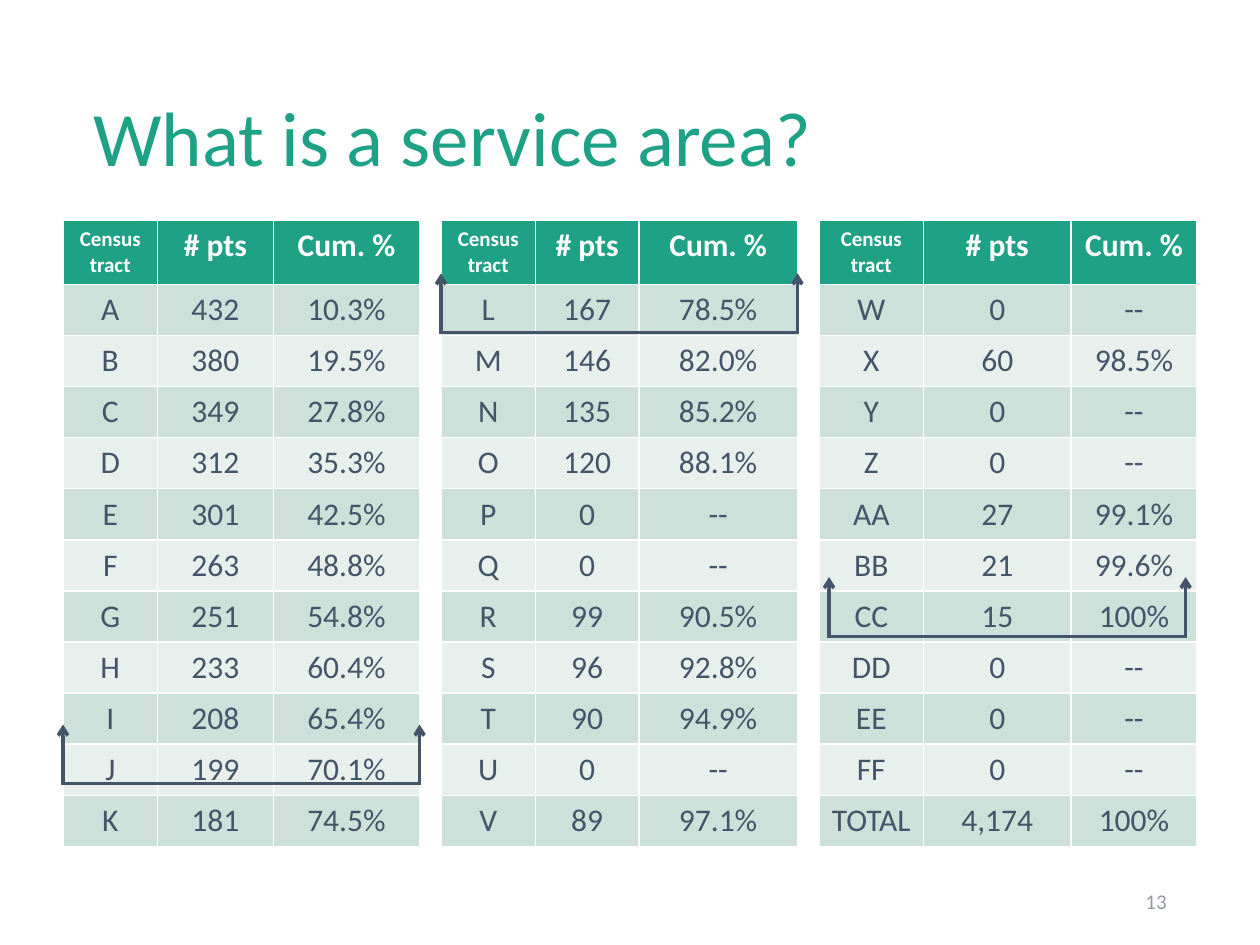
from lxml import etree
from pptx import Presentation
from pptx.dml.color import RGBColor
from pptx.enum.shapes import MSO_CONNECTOR as Connector
from pptx.enum.text import MSO_ANCHOR as Anchor, MSO_AUTO_SIZE as AutoSize, PP_ALIGN as Align
from pptx.oxml.ns import qn
from pptx.util import Inches, Pt

FONT = "Calibri"
COLORS = {"green": "1EA185", "dark": "445469", "white": "FFFFFF",
          "odd": "CDE0D9", "even": "E8F0ED", "grey": "9499A1"}
TITLE = "What is a service area?"
PAGE_NUMBER = "13"
HEADER = ("Census tract", "# pts", "Cum. %")
TABLES = [
    {"left": 0.5, "columns": (0.75, 0.92, 1.16), "rows": [
        ("A", "432", "10.3%"), ("B", "380", "19.5%"), ("C", "349", "27.8%"),
        ("D", "312", "35.3%"), ("E", "301", "42.5%"), ("F", "263", "48.8%"),
        ("G", "251", "54.8%"), ("H", "233", "60.4%"), ("I", "208", "65.4%"),
        ("J", "199", "70.1%"), ("K", "181", "74.5%")]},
    {"left": 3.5, "columns": (0.75, 0.82, 1.26), "rows": [
        ("L", "167", "78.5%"), ("M", "146", "82.0%"), ("N", "135", "85.2%"),
        ("O", "120", "88.1%"), ("P", "0", "--"), ("Q", "0", "--"),
        ("R", "99", "90.5%"), ("S", "96", "92.8%"), ("T", "90", "94.9%"),
        ("U", "0", "--"), ("V", "89", "97.1%")]},
    {"left": 6.5, "columns": (0.83, 1.17, 1), "rows": [
        ("W", "0", "--"), ("X", "60", "98.5%"), ("Y", "0", "--"),
        ("Z", "0", "--"), ("AA", "27", "99.1%"), ("BB", "21", "99.6%"),
        ("CC", "15", "100%"), ("DD", "0", "--"), ("EE", "0", "--"),
        ("FF", "0", "--"), ("TOTAL", "4,174", "100%")]},
]
TABLE_TOP, TABLE_HEIGHT, HEADER_HEIGHT = 1.75, 4.96, 0.5
BRACKETS = [(0.5, 6.22), (3.5, 2.64), (6.58, 5.05)]
BRACKET_WIDTH, BRACKET_HEIGHT, BRACKET_OVERLAP = 2.83, 0.47, 0.01


def color(name):
    return RGBColor.from_string(COLORS[name])


def format_text(frame, size, color_name, align, bold=False):
    for para in frame.paragraphs:
        para.alignment = align
        for span in para.runs:
            span.font.name = FONT
            span.font.size = Pt(size)
            span.font.bold = bold
            span.font.color.rgb = color(color_name)


def set_frame(frame):
    frame.word_wrap = True
    frame.auto_size = AutoSize.NONE
    frame.vertical_anchor = Anchor.MIDDLE
    frame.margin_left = frame.margin_right = Inches(0.05)
    frame.margin_top = frame.margin_bottom = Inches(0.03)


def add_title(page):
    title = page.shapes.title
    title.left, title.top = Inches(0.69), Inches(0.4)
    title.width, title.height = Inches(8.62), Inches(1.45)
    title.text_frame.text = TITLE
    set_frame(title.text_frame)
    title.text_frame.paragraphs[0].line_spacing = 0.9
    format_text(title.text_frame, 44, "green", Align.LEFT)


def add_tract_table(page, left, columns, rows):
    table = page.shapes.add_table(
        len(rows) + 1, len(columns), Inches(left), Inches(TABLE_TOP),
        Inches(sum(columns)), Inches(TABLE_HEIGHT)).table
    for column, width in zip(table.columns, columns):
        column.width = Inches(width)
    row_height = (TABLE_HEIGHT - HEADER_HEIGHT) / len(rows)
    for r, values in enumerate([HEADER, *rows]):
        is_header = r == 0
        table.rows[r].height = Inches(HEADER_HEIGHT if is_header else row_height)
        fill = "green" if is_header else "odd" if r % 2 else "even"
        for c, value in enumerate(values):
            cell = table.cell(r, c)
            cell.text_frame.text = value
            cell.fill.solid()
            cell.fill.fore_color.rgb = color(fill)
            format_text(cell.text_frame, 12 if is_header and c == 0 else 18,
                        "white" if is_header else "dark", Align.CENTER, is_header)


def add_line(group, start, end, arrow=False):
    line = group.shapes.add_connector(
        Connector.STRAIGHT, *(Inches(value) for value in (*start, *end)))
    line.line.color.rgb = color("dark")
    line.line.width = Pt(2)
    properties = line._element.spPr
    if arrow:
        etree.SubElement(properties.find(qn("a:ln")), qn("a:tailEnd"), type="arrow")
    etree.SubElement(properties, qn("a:effectLst"))


def add_bracket(page, left, base):
    group = page.shapes.add_group_shape()
    right = left + BRACKET_WIDTH
    add_line(group, (left, base), (right, base))
    for x in (left, right):
        add_line(group, (x, base + BRACKET_OVERLAP), (x, base - BRACKET_HEIGHT), arrow=True)


def add_page_number(page):
    box = page.shapes.add_textbox(Inches(7.06), Inches(6.95), Inches(2.25), Inches(0.4))
    box.text_frame.text = PAGE_NUMBER
    set_frame(box.text_frame)
    format_text(box.text_frame, 12, "grey", Align.RIGHT)


def main():
    deck = Presentation()
    deck.slide_width, deck.slide_height = Inches(10), Inches(7.5)
    page = deck.slides.add_slide(deck.slide_layouts[5])
    add_title(page)
    for table in TABLES:
        add_tract_table(page, **table)
    for left, base in BRACKETS:
        add_bracket(page, left, base)
    add_page_number(page)
    deck.save("out.pptx")


if __name__ == "__main__":
    main()
